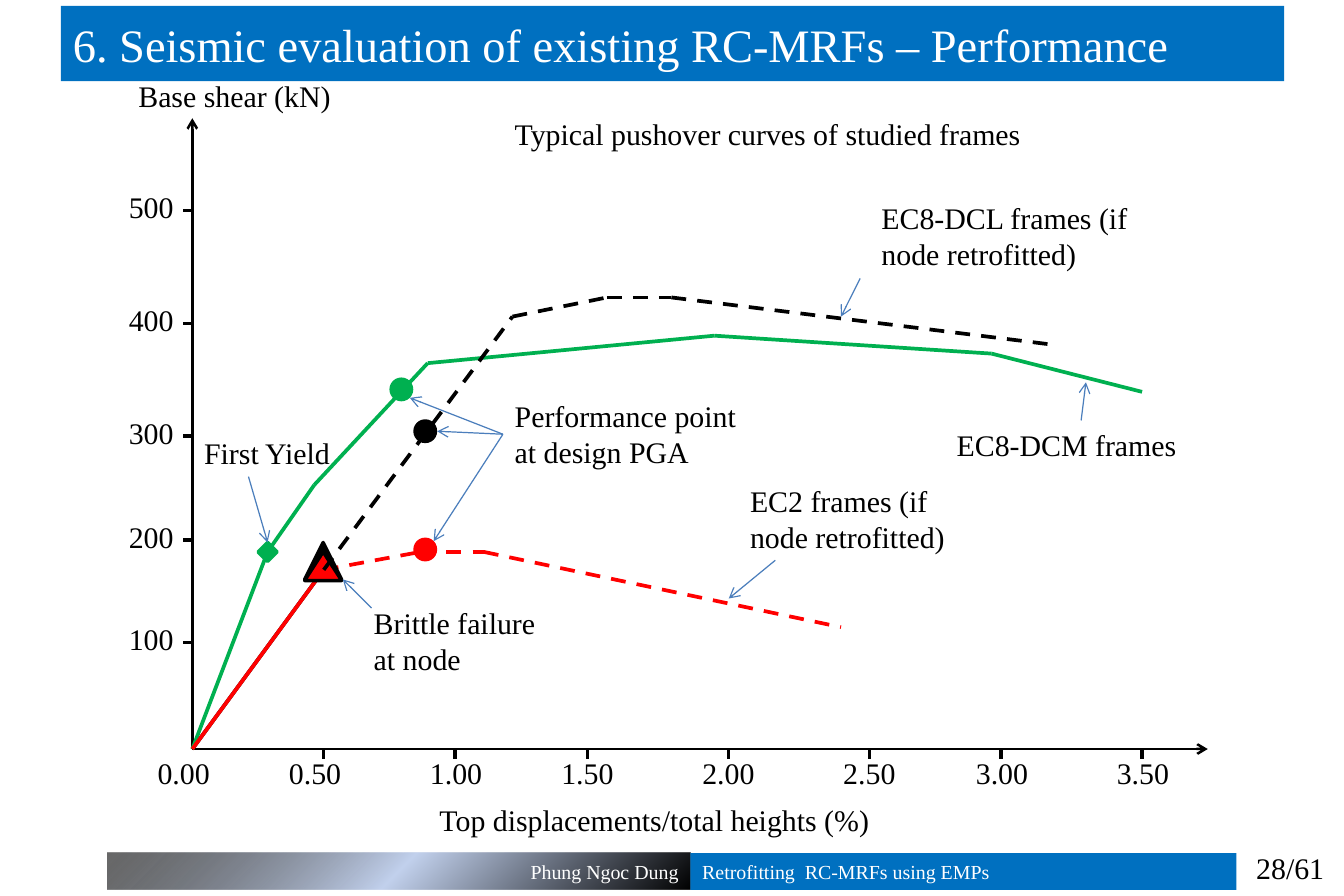
from dataclasses import dataclass
from itertools import pairwise

from lxml import etree
from pptx import Presentation
from pptx.dml.color import RGBColor
from pptx.enum.dml import MSO_LINE_DASH_STYLE as Dash
from pptx.enum.shapes import MSO_CONNECTOR_TYPE as Conn, MSO_SHAPE as Shape
from pptx.enum.text import MSO_ANCHOR as Anchor, MSO_AUTO_SIZE as AutoSize, PP_ALIGN as Align
from pptx.oxml import parse_xml
from pptx.oxml.ns import nsdecls, qn
from pptx.util import Inches, Pt

COLORS = {"black": "000000", "white": "FFFFFF", "blue": "0070C0",
          "red": "FF0000", "green": "00B050", "pointer": "4B7EBC"}
FONT = "Times New Roman"
ORIGIN = (1.61, 6.27)
BRITTLE = (2.71, 4.77)
TICK = 0.08

Point = tuple[float, float]
Box = tuple[float, float, float, float]


@dataclass
class Curve:
    color: str
    points: list[Point]
    dashed: bool = False


@dataclass
class Marker:
    kind: Shape
    box: Box
    color: str
    outline: str | None = None


@dataclass
class Label:
    text: str
    box: Box


@dataclass
class Pointer:
    start: Point
    end: Point
    source: str = ""  # label whose side the pointer leaves from
    side: int = 0


# Data of the diagram
ELASTIC = [Curve("black", [ORIGIN, BRITTLE]),
           Curve("red", [BRITTLE, (3.52, 4.62), (4.05, 4.62), (7.04, 5.25)], True),
           Curve("green", [ORIGIN, (2.24, 4.62), (2.63, 4.06), (3.58, 3.04),
                           (5.98, 2.81), (8.3, 2.96), (9.56, 3.28)])]
EC2_START = Curve("red", [ORIGIN, BRITTLE])
DCL_RETROFITTED = Curve("black", [BRITTLE, (4.29, 2.65), (5.08, 2.49),
                                  (5.62, 2.49), (8.77, 2.88)], True)

DCL_FAILURE = Marker(Shape.ISOSCELES_TRIANGLE, (2.55, 4.54, 0.31, 0.31), "black", "black")
EC2_FAILURE = Marker(Shape.ISOSCELES_TRIANGLE, (2.55, 4.62, 0.31, 0.24), "red", "black")
FIRST_YIELD = Marker(Shape.DIAMOND, (2.16, 4.54, 0.16, 0.16), "green", "green")
PERFORMANCE = [Marker(Shape.FLOWCHART_CONNECTOR, (x, y, 0.2, 0.2), color)
               for x, y, color in [(3.46, 4.5, "red"), (3.46, 3.51, "black"),
                                   (3.26, 3.16, "green")]]

X_TICKS = [2.71, 3.81, 4.92, 6.1, 7.28, 8.38, 9.56]
X_LABELS = [1.22, 2.32, 3.5, 4.6, 5.78, 6.96, 8.07, 9.25]
Y_TICKS = [5.38, 4.52, 3.65, 2.71, 1.76]

LABELS = {
    "y axis": Label("Base shear (kN)", (1.06, 0.6, 2.28, 0.4)),
    "x axis": Label("Top displacements/total heights (%)", (3.58, 6.66, 4.02, 0.4)),
    "heading": Label("Typical pushover curves of studied frames", (4.21, 0.92, 4.57, 0.4)),
    "performance": Label("Performance point at design PGA", (4.21, 3.28, 2.28, 0.71)),
    "brittle": Label("Brittle failure at node", (3.03, 5.01, 1.57, 0.71)),
    "ec2": Label("EC2 frames (if node retrofitted)", (6.18, 3.99, 2.05, 0.71)),
    "dcl": Label("EC8-DCL frames (if node retrofitted)", (7.28, 1.62, 2.28, 0.71)),
    "dcm": Label("EC8-DCM frames", (7.91, 3.52, 2.28, 0.4)),
    "yield": Label("First Yield", (1.61, 3.59, 1.42, 0.4)),
}
POINTERS = [
    Pointer((3.11, 5.09), (2.87, 4.85)),
    Pointer((9.05, 3.52), (9.09, 3.2), "dcm", 0),
    Pointer((4.21, 3.63), (3.66, 3.61), "performance", 1),
    Pointer((4.21, 3.63), (3.63, 4.53), "performance", 1),
    Pointer((4.21, 3.63), (3.43, 3.33), "performance", 1),
    Pointer((6.49, 4.69), (6.1, 5.01)),
    Pointer((7.2, 2.33), (7.04, 2.65)),
]


def rgb(name: str) -> RGBColor:
    return RGBColor.from_string(COLORS[name])


def write(sp, text: str, *, size: float = 18, color: str = "black",
          align: Align = Align.LEFT, anchor: Anchor = Anchor.TOP) -> None:
    tf = sp.text_frame
    tf.word_wrap = True
    tf.auto_size = AutoSize.NONE
    tf.vertical_anchor = anchor
    p = tf.paragraphs[0]
    p.alignment = align
    r = p.add_run()
    r.text = text
    r.font.name, r.font.size = FONT, Pt(size)
    r.font.color.rgb = rgb(color)


def add_text(slide, text: str, box: Box, **fmt):
    sp = slide.shapes.add_textbox(*map(Inches, box))
    write(sp, text, **fmt)
    return sp


def add_shape(slide, m: Marker):
    sp = slide.shapes.add_shape(m.kind, *map(Inches, m.box))
    sp.shadow.inherit = False
    sp.fill.solid()
    sp.fill.fore_color.rgb = rgb(m.color)
    if m.outline:
        sp.line.color.rgb = rgb(m.outline)
        sp.line.width = Pt(2)
    else:
        sp.line.fill.background()
    return sp


def add_line(slide, start: Point, end: Point, color: str, width: float,
             dashed: bool = False, arrow: bool = False):
    cx = slide.shapes.add_connector(Conn.STRAIGHT, *map(Inches, (*start, *end)))
    cx.line.color.rgb = rgb(color)
    cx.line.width = Pt(width)
    if dashed:
        cx.line.dash_style = Dash.DASH
    if arrow:
        etree.SubElement(cx.line._get_or_add_ln(), qn("a:tailEnd"), type="arrow")
    etree.SubElement(cx._element.spPr, qn("a:effectLst"))
    return cx


def add_curve(slide, c: Curve) -> None:
    for start, end in pairwise(c.points):
        add_line(slide, start, end, c.color, 2.25, c.dashed)


def add_footer(slide) -> None:
    author = add_shape(slide, Marker(Shape.RECTANGLE, (0.9, 7.14, 4.88, 0.31), "black"))
    solid = author._element.spPr.find(qn("a:solidFill"))
    solid.getparent().replace(solid, parse_xml(
        f'<a:gradFill {nsdecls("a")} rotWithShape="1"><a:gsLst>'
        '<a:gs pos="0"><a:srgbClr val="000000"/></a:gs>'
        '<a:gs pos="50000"><a:srgbClr val="C2D1ED"/></a:gs>'
        '<a:gs pos="100000"><a:srgbClr val="000000"><a:alpha val="59000"/></a:srgbClr></a:gs>'
        '</a:gsLst><a:path path="circle"><a:fillToRect l="100000" t="100000"/></a:path>'
        '</a:gradFill>'))
    write(author, "Phung Ngoc Dung", size=12, color="white",
          align=Align.RIGHT, anchor=Anchor.MIDDLE)
    topic = add_shape(slide, Marker(Shape.RECTANGLE, (5.78, 7.14, 4.57, 0.31), "blue"))
    write(topic, "Retrofitting  RC-MRFs using EMPs", size=12, color="white", anchor=Anchor.MIDDLE)
    add_text(slide, "28/61", (10.35, 7.06, 0.9, 0.4), align=Align.CENTER)


def add_axes(slide) -> None:
    x0, y0 = ORIGIN
    for end in [(10.11, y0), (x0, 0.99)]:
        add_line(slide, ORIGIN, end, "black", 1.5, arrow=True)
    for x in X_TICKS:
        add_line(slide, (x, y0 + TICK), (x, y0), "black", 2)
    for i, left in enumerate(X_LABELS):
        add_text(slide, f"{i * 0.5:.2f}", (left, y0, 0.79, 0.4))
    for i, y in enumerate(Y_TICKS, 1):
        add_line(slide, (x0, y), (x0 - TICK, y), "black", 2)
        add_text(slide, str(i * 100), (0.98, y - 0.23, 0.63, 0.4))


def main() -> None:
    prs = Presentation()
    prs.slide_width, prs.slide_height = Inches(11.25), Inches(7.5)
    slide = prs.slides.add_slide(prs.slide_layouts[5])

    # Title
    title = slide.shapes.title
    title.left, title.top, title.width, title.height = map(Inches, (0.51, 0.05, 10.24, 0.63))
    title.fill.solid()
    title.fill.fore_color.rgb = rgb("blue")
    write(title, "6. Seismic evaluation of existing RC-MRFs – Performance",
          size=28, color="white", anchor=Anchor.MIDDLE)

    add_footer(slide)
    add_axes(slide)

    # Pushover curves and their markers
    for curve in ELASTIC:
        add_curve(slide, curve)
    add_shape(slide, DCL_FAILURE)
    add_curve(slide, EC2_START)
    add_shape(slide, EC2_FAILURE)
    add_curve(slide, DCL_RETROFITTED)
    for marker in PERFORMANCE:
        add_shape(slide, marker)
    diamond = add_shape(slide, FIRST_YIELD)

    # Labels and pointers
    labels = {key: add_text(slide, lb.text, lb.box) for key, lb in LABELS.items()}
    for pt in POINTERS:
        cx = add_line(slide, pt.start, pt.end, "pointer", 0.75, arrow=True)
        if pt.source:
            cx.begin_connect(labels[pt.source], pt.side)
    cx = add_line(slide, (2.08, 3.99), (2.24, 4.54), "pointer", 0.75, arrow=True)
    cx.end_connect(diamond, 0)

    prs.save("out.pptx")


if __name__ == "__main__":
    main()
